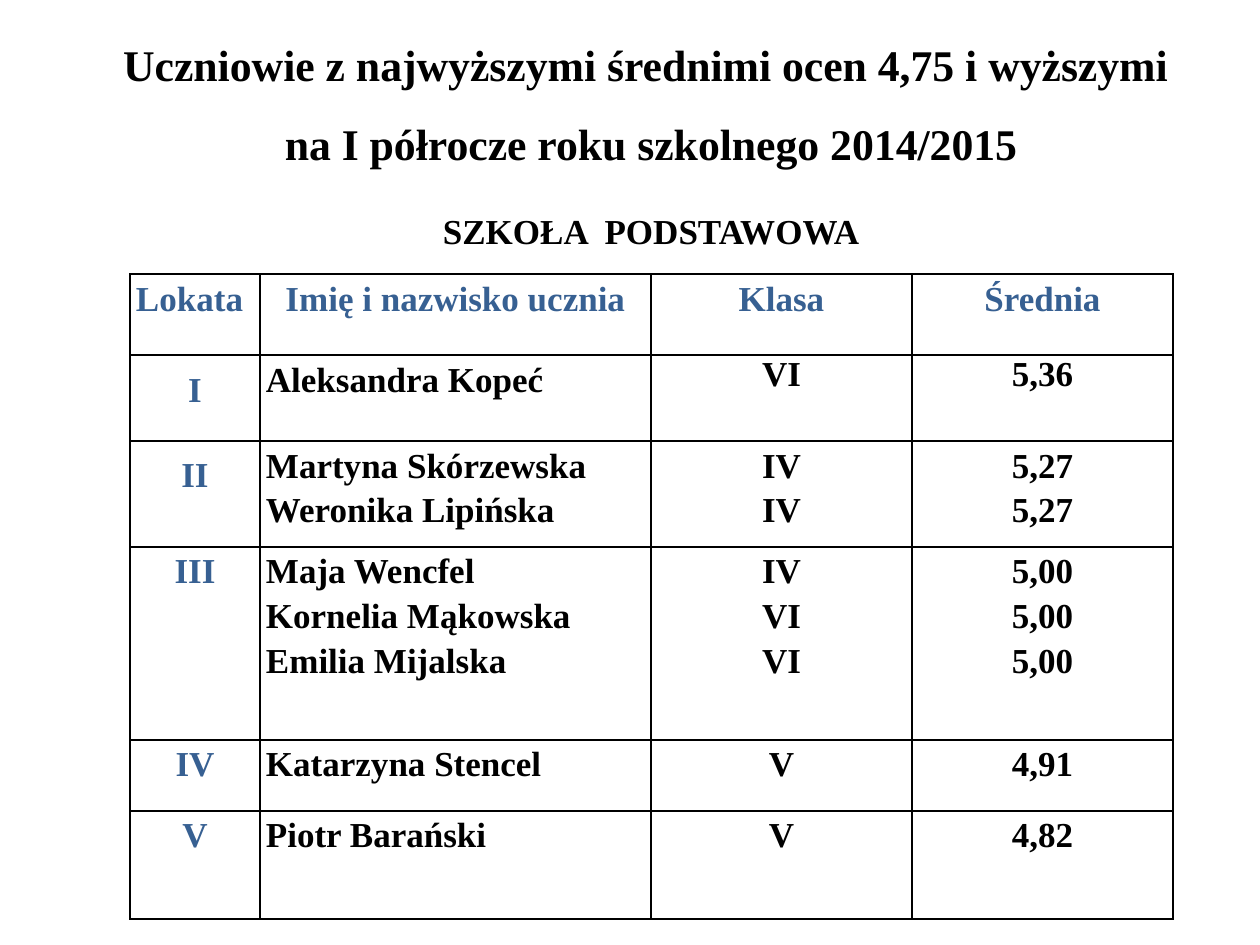
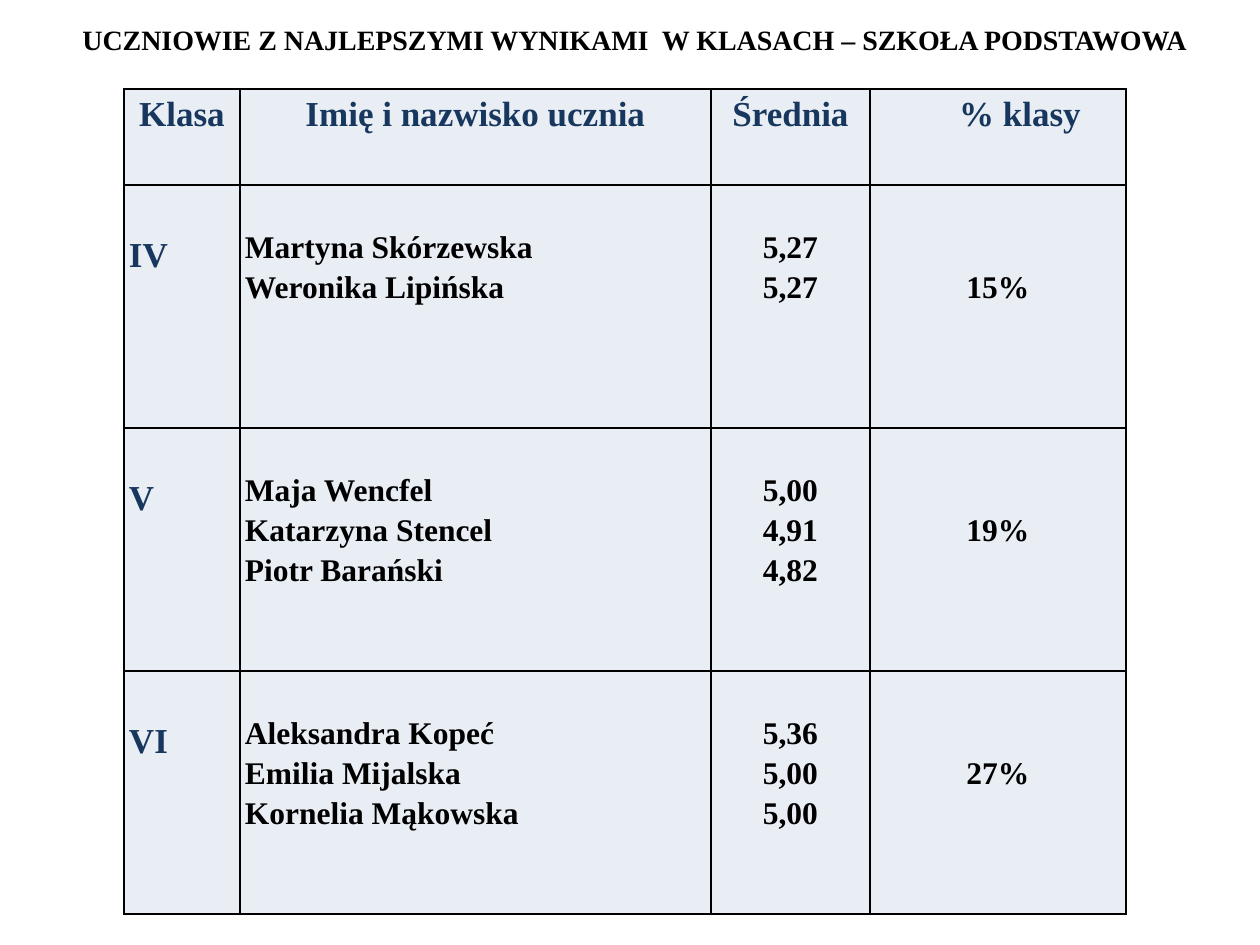
import lxml.etree
import pptx
import pptx.dml.color
import pptx.enum.text
import pptx.oxml.ns
import pptx.util

LEFT = pptx.enum.text.PP_ALIGN.LEFT
CENTER = pptx.enum.text.PP_ALIGN.CENTER
FONT = "Times New Roman"
BLACK = "000000"
PX_PER_INCH = 126

RANKING = {
    "title": [
        {"text": "Uczniowie z najwyższymi średnimi ocen 4,75 i wyższymi \v"
                 "na I półrocze roku szkolnego 2014/2015",
         "size": 25, "spacing": 1.5},
        {"text": "SZKOŁA  PODSTAWOWA", "size": 20, "before": 23},
    ],
    "title_box": (104, 12, 1094, 242),
    "rows": [
        ["Lokata", "Imię i nazwisko ucznia", "Klasa", "Średnia"],
        ["I", "Aleksandra Kopeć", "VI", "5,36"],
        ["II", "Martyna Skórzewska\nWeronika Lipińska", "IV\nIV", "5,27\n5,27"],
        ["III", "Maja Wencfel\nKornelia Mąkowska\nEmilia Mijalska",
         "IV\nVI\nVI", "5,00\n5,00\n5,00"],
        ["IV", "Katarzyna Stencel", "V", "4,91"],
        ["V", "Piotr Barański", "V", "4,82"],
    ],
    "corner": (130, 274),
    "widths": [130, 391, 261, 261],
    "heights": [81, 86, 106, 193, 71, 108],
    "accent": "376092",
    "fill": None,
    "outline": 1,
    "side": 6,
    "body_size": 20,
    "body_aligns": [CENTER, LEFT, CENTER, CENTER],
    "body_tops": [0, 0, 0, 0],
    "special": {
        (0, 0): {"align": LEFT},
        (1, 0): {"top": 10},
        (2, 0): {"top": 10},
        (1, 2): {"spacing": 1.0},
        (1, 3): {"spacing": 1.0},
    },
}

BEST_BY_CLASS = {
    "title": [
        {"text": "UCZNIOWIE Z NAJLEPSZYMI WYNIKAMI  W KLASACH – SZKOŁA PODSTAWOWA",
         "size": 16},
    ],
    "title_box": (35, 23, 1200, 34),
    "rows": [
        ["Klasa", "Imię i nazwisko ucznia", "Średnia", "% klasy"],
        ["IV", "Martyna Skórzewska\nWeronika Lipińska", "5,27\n5,27", "15%"],
        ["V", "Maja Wencfel\nKatarzyna Stencel\nPiotr Barański",
         "5,00\n4,91\n4,82", "19%"],
        ["VI", "Aleksandra Kopeć\nEmilia Mijalska\nKornelia Mąkowska",
         "5,36\n5,00\n5,00", "27%"],
    ],
    "corner": (124, 89),
    "widths": [116, 471, 159, 256],
    "heights": [96, 243, 243, 243],
    "accent": "17375E",
    "fill": "E9EDF4",
    "outline": 1.5,
    "side": 5,
    "body_size": 18,
    "body_aligns": [LEFT, LEFT, CENTER, CENTER],
    "body_tops": [45, 40, 40, 80],
    "special": {(0, 3): {"left": 49}},
}


def px(length):
    return pptx.util.Emu(round(length * 914400 / PX_PER_INCH))


def rgb(color):
    return pptx.dml.color.RGBColor.from_string(color)


def write_text(para, text, size, color=BLACK, align=CENTER, spacing=1.0, before=0):
    para.text = text
    para.alignment = align
    para.line_spacing = spacing
    para.space_before = pptx.util.Pt(before)
    for span in para.runs:
        span.font.name = FONT
        span.font.size = pptx.util.Pt(size)
        span.font.bold = True
        span.font.color.rgb = rgb(color)


def add_title(page, lines, box):
    title = page.shapes.title
    title.left, title.top, title.width, title.height = map(px, box)
    frame = title.text_frame
    frame.word_wrap = True
    frame.auto_size = pptx.enum.text.MSO_AUTO_SIZE.NONE
    frame.vertical_anchor = pptx.enum.text.MSO_ANCHOR.TOP
    frame.margin_left = frame.margin_right = frame.margin_top = frame.margin_bottom = 0
    for index, line in enumerate(lines):
        para = frame.add_paragraph() if index else frame.paragraphs[0]
        write_text(para, **line)


def add_border(cell, side, width):
    """Draw one side (L, R, T or B) of a cell, width in points."""
    qn = pptx.oxml.ns.qn
    properties = cell._tc.get_or_add_tcPr()
    line = lxml.etree.SubElement(properties, qn(f"a:ln{side}"),
                                 w=str(pptx.util.Pt(width)))
    fill = lxml.etree.SubElement(line, qn("a:solidFill"))
    lxml.etree.SubElement(fill, qn("a:srgbClr"), val=BLACK)


def fill_cell(cell, text, style, top=0, left=0, **text_format):
    cell.margin_left = px(left or style["side"])
    cell.margin_right = px(style["side"])
    cell.margin_top, cell.margin_bottom = px(top), 0
    for index, line in enumerate(text.split("\n")):
        frame = cell.text_frame
        para = frame.add_paragraph() if index else frame.paragraphs[0]
        write_text(para, line, **text_format)


def add_results(page, style):
    rows, widths, heights = style["rows"], style["widths"], style["heights"]
    table = page.shapes.add_table(
        len(rows), len(widths), *map(px, style["corner"]),
        px(sum(widths)), px(sum(heights))).table
    table.first_row = table.horz_banding = False
    for column, width in zip(table.columns, widths):
        column.width = px(width)
    for row, height in zip(table.rows, heights):
        row.height = px(height)

    last_row, last_column = len(rows) - 1, len(widths) - 1
    for r, texts in enumerate(rows):
        for c, text in enumerate(texts):
            cell = table.cell(r, c)
            header = r == 0
            accented = header or c == 0
            options = {
                "size": 20 if accented else style["body_size"],
                "color": style["accent"] if accented else BLACK,
                "align": CENTER if header else style["body_aligns"][c],
                "top": 0 if header else style["body_tops"][c],
                "spacing": 1.15,
            }
            options.update(style["special"].get((r, c), {}))
            fill_cell(cell, text, style, **options)
            outer_sides = {"L": c == 0, "R": c == last_column,
                           "T": r == 0, "B": r == last_row}
            for side, outer in outer_sides.items():
                add_border(cell, side, style["outline"] if outer else 1)
            if style["fill"]:
                cell.fill.solid()
                cell.fill.fore_color.rgb = rgb(style["fill"])
            else:
                cell.fill.background()


def main():
    deck = pptx.Presentation()
    deck.slide_width, deck.slide_height = px(1260), px(945)
    title_only = deck.slide_layouts[5]
    for style in (RANKING, BEST_BY_CLASS):
        page = deck.slides.add_slide(title_only)
        add_title(page, style["title"], style["title_box"])
        add_results(page, style)
    deck.save("out.pptx")


if __name__ == "__main__":
    main()
